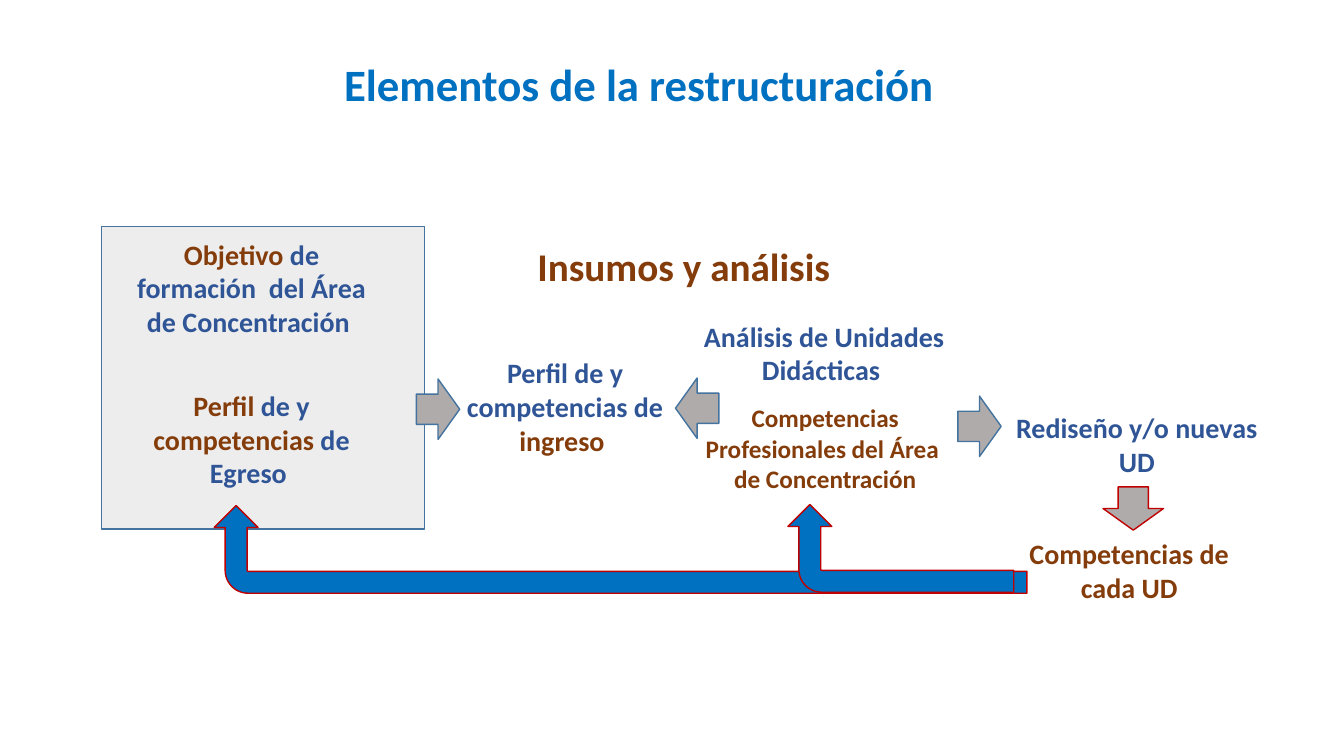
from pptx import Presentation
from pptx.dml.color import RGBColor
from pptx.enum.shapes import MSO_SHAPE
from pptx.enum.text import MSO_ANCHOR, PP_ALIGN
from pptx.util import Inches, Pt

RECTANGLE = MSO_SHAPE.RECTANGLE
LEFT, RIGHT, DOWN = MSO_SHAPE.LEFT_ARROW, MSO_SHAPE.RIGHT_ARROW, MSO_SHAPE.DOWN_ARROW
BENT = MSO_SHAPE.BENT_ARROW
MIDDLE, CENTER = MSO_ANCHOR.MIDDLE, PP_ALIGN.CENTER

FONT = "Calibri"
BROWN, NAVY, BLUE = "843C0B", "2F5597", "0070C0"
GRAY, PALE, WHITE = "AFABAB", "EDEDED", "FFFFFF"
STEEL, RED = "43739E", "C00000"

TITLE_BOX = (2.43, 0.48, 7.92, 0.69)
TITLE = [[("Elementos de la restructuración ", BLUE)]]
PROFILE_PANEL = (1.01, 2.25, 3.2, 3)

LABELS = [
    ((4.15, 2.19, 5.35, 0.9), 28, [[("Insumos y análisis ", BROWN)]]),
    ((1.15, 2.39, 2.69, 0.93), 20,
     [[("Objetivo", BROWN), (" de formación  del Área de Concentración ", NAVY)]]),
    ((1.13, 3.92, 2.73, 0.87), 20,
     [[("Perfil ", BROWN), ("de y ", NAVY), ("competencias ", BROWN), ("de Egreso ", NAVY)]]),
    ((4.24, 3.55, 2.73, 0.96), 20,
     [[("Perfil de y competencias de ", NAVY), ("ingreso ", BROWN)]]),
    ((6.81, 3.05, 2.73, 0.9), 20, [[("Análisis de Unidades Didácticas ", NAVY)]]),
    ((6.82, 4.13, 2.73, 0.63), 18,
     [[("Competencias Profesionales del Área  de Concentración", BROWN)]]),
    ((9.91, 3.97, 2.73, 0.87), 20, [[("Rediseño y/o nuevas UD", NAVY)]]),
    ((9.86, 5.22, 2.68, 0.87), 20, [[("Competencias de", BROWN)], [("cada UD", BROWN)]]),
]

FLOW_ARROWS = [
    (RIGHT, (4.13, 3.76, 0.43, 0.6), STEEL),
    (LEFT, (6.7, 3.75, 0.43, 0.6), STEEL),
    (RIGHT, (9.5, 3.93, 0.43, 0.6), STEEL),
    (DOWN, (10.94, 4.83, 0.6, 0.43), RED),
]

FEEDBACK_ARROWS = [(5.72, 1.42, 0.87, 8.06), (8.5, 4.32, 0.87, 2.24)]
BENT_RATIOS = (0.25, 0.25, 0.25, 0.26)


def color(code):
    return RGBColor.from_string(code)


def add_figure(slide, kind, box, fill, outline=None):
    figure = slide.shapes.add_shape(kind, *map(Inches, box))
    figure.shadow.inherit = False
    figure.fill.solid()
    figure.fill.fore_color.rgb = color(fill)
    if outline:
        figure.line.color.rgb = color(outline)
        figure.line.width = Pt(1)
    else:
        figure.line.fill.background()
    return figure


def write(holder, size, paragraphs):
    frame = holder.text_frame
    frame.word_wrap = True
    frame.vertical_anchor = MIDDLE
    for index, pieces in enumerate(paragraphs):
        paragraph = frame.add_paragraph() if index else frame.paragraphs[0]
        paragraph.alignment = CENTER
        for words, tint in pieces:
            run = paragraph.add_run()
            run.text = words
            run.font.name = FONT
            run.font.size = Pt(size)
            run.font.bold = True
            run.font.color.rgb = color(tint)


def main():
    deck = Presentation()
    deck.slide_width, deck.slide_height = Inches(13.33), Inches(7.5)
    slide = deck.slides.add_slide(deck.slide_layouts[6])

    write(add_figure(slide, RECTANGLE, TITLE_BOX, WHITE), 32, TITLE)
    add_figure(slide, RECTANGLE, PROFILE_PANEL, PALE, STEEL)

    for box, size, paragraphs in LABELS:
        write(slide.shapes.add_textbox(*map(Inches, box)), size, paragraphs)

    for kind, box, outline in FLOW_ARROWS:
        add_figure(slide, kind, box, GRAY, outline)

    for box in FEEDBACK_ARROWS:
        feedback = add_figure(slide, BENT, box, BLUE, RED)
        feedback.rotation = 270
        for index, ratio in enumerate(BENT_RATIOS):
            feedback.adjustments[index] = ratio

    deck.save("out.pptx")


if __name__ == "__main__":
    main()
